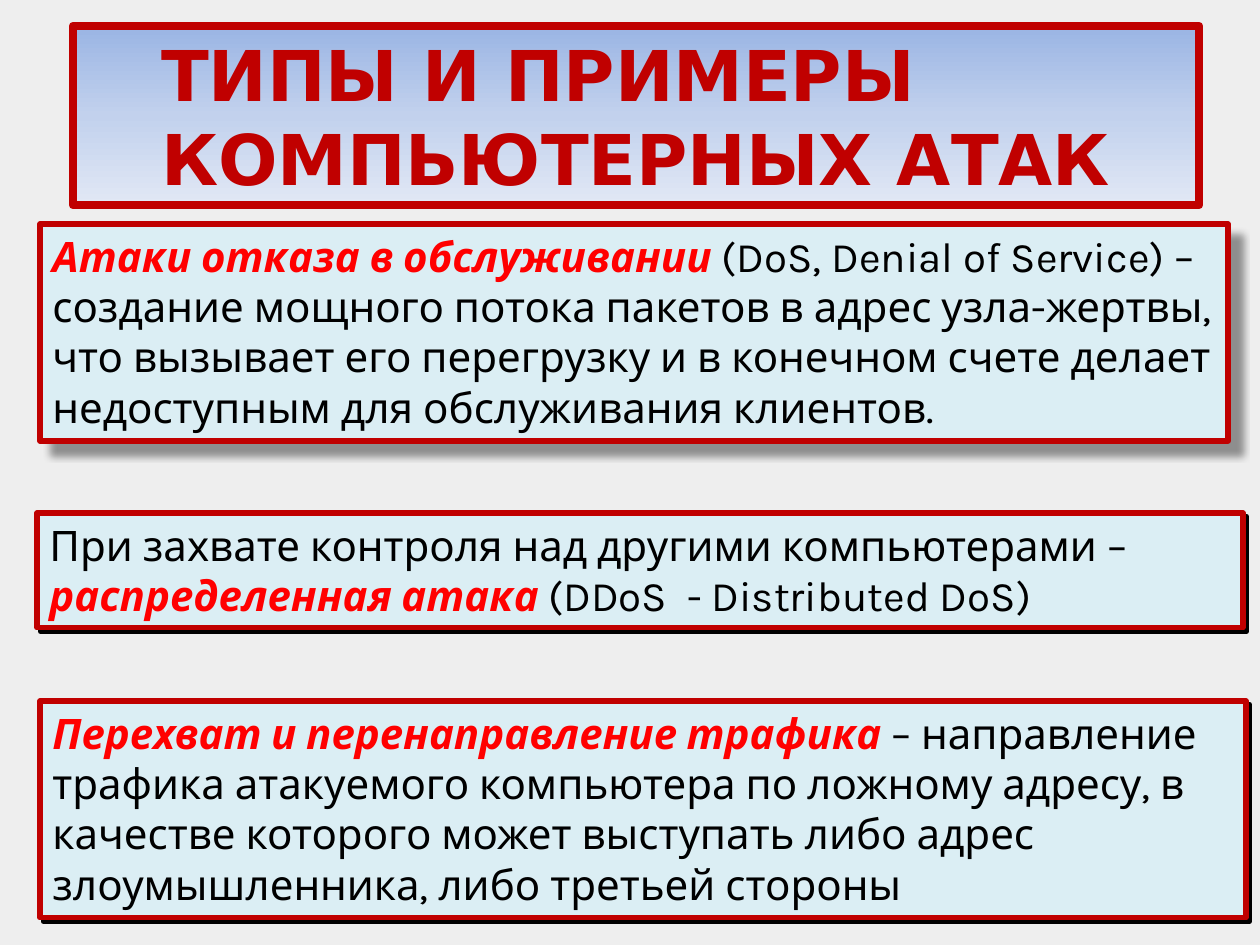
from copy import deepcopy
from dataclasses import dataclass

from lxml.etree import SubElement
from pptx import Presentation
from pptx.dml.color import RGBColor as Rgb
from pptx.enum.shapes import MSO_SHAPE as Shape
from pptx.enum.text import MSO_ANCHOR as Anchor, MSO_AUTO_SIZE as AutoSize, PP_ALIGN as Align
from pptx.oxml.ns import qn
from pptx.util import Emu, Pt

PX_PER_INCH = 126


@dataclass(frozen=True)
class Theme:
    background: str = "EEEEEE"
    panel: str = "DBEEF4"
    border: str = "C00000"
    title: str = "C00000"
    term: str = "FF0000"
    text: str = "000000"
    shadow: str = "000000"
    title_gradient: tuple = ((0, "9AB5E4"), (0.5, "C2D1ED"), (1, "E1E8F5"))
    title_font: str = "DejaVu Sans"
    body_font: str = "Karla"
    title_size: int = 40
    body_size: int = 24
    title_border: int = 5
    panel_border: int = 3


THEME = Theme()


@dataclass(frozen=True)
class Shadow:
    opacity: int
    blur: float
    distance: float


SOFT = Shadow(opacity=40, blur=4, distance=10)
HARD = Shadow(opacity=100, blur=0, distance=2.8)

# Position of each panel, its shadow, and its runs as (text, is a term)
PANELS = [
    ((40, 224, 1188, 217), SOFT, [
        ("Атаки отказа в обслуживании ", True),
        ("(DoS, Denial of Service) – создание мощного потока пакетов в адрес "
         "узла-жертвы, что вызывает его перегрузку и в конечном счете делает "
         "недоступным для обслуживания клиентов.", False),
    ]),
    ((37, 513, 1206, 115), HARD, [
        ("При захвате контроля над другими компьютерами – ", False),
        ("распределенная атака ", True),
        ("(DDoS  - Distributed DoS)", False),
    ]),
    ((40, 701, 1206, 217), HARD, [
        ("Перехват и перенаправление трафика ", True),
        ("– направление трафика атакуемого компьютера по ложному адресу, в "
         "качестве которого может выступать либо адрес злоумышленника, либо "
         "третьей стороны", False),
    ]),
]


def px(length):
    return Emu(round(length * 914400 / PX_PER_INCH))


def set_border(shape, width):
    shape.line.color.rgb = Rgb.from_string(THEME.border)
    shape.line.width = Pt(width)


def set_gradient(shape, stops):
    """Fill from top to bottom with any number of (position, colour) stops."""
    shape.fill.gradient()
    shape.fill.gradient_angle = 270
    stop_list = shape._element.spPr.find(".//" + qn("a:gsLst"))
    for _ in stops[2:]:
        stop_list.append(deepcopy(stop_list[0]))
    for stop, (position, color) in zip(shape.fill.gradient_stops, stops):
        stop.position = position
        stop.color.rgb = Rgb.from_string(color)


def set_shadow(shape, shadow):
    """Cast a shadow to the lower right, at 45 degrees."""
    shape.shadow.inherit = False
    effects = shape._element.spPr.find(qn("a:effectLst"))
    outer = SubElement(effects, qn("a:outerShdw"), blurRad=str(Pt(shadow.blur)),
                       dist=str(Pt(shadow.distance)), dir=str(45 * 60000),
                       algn="tl", rotWithShape="0")
    color = SubElement(outer, qn("a:srgbClr"), val=THEME.shadow)
    SubElement(color, qn("a:alpha"), val=str(shadow.opacity * 1000))


def add_run(paragraph, text, font, size, color, bold=False, italic=False):
    run = paragraph.add_run()
    run.text = text
    run.font.name = font
    run.font.size = Pt(size)
    run.font.color.rgb = Rgb.from_string(color)
    run.font.bold = bold
    run.font.italic = italic


def format_title(title, text):
    title.left, title.top, title.width, title.height = map(px, (73, 26, 1126, 179))
    set_gradient(title, THEME.title_gradient)
    set_border(title, THEME.title_border)
    frame = title.text_frame
    frame.word_wrap = True
    frame.auto_size = AutoSize.NONE
    frame.vertical_anchor = Anchor.MIDDLE
    frame.margin_left = px(88)
    paragraph = frame.paragraphs[0]
    paragraph.alignment = Align.LEFT
    add_run(paragraph, text, THEME.title_font, THEME.title_size, THEME.title, bold=True)


def add_panel(slide, box, shadow, runs):
    panel = slide.shapes.add_shape(Shape.RECTANGLE, *map(px, box))
    panel.fill.solid()
    panel.fill.fore_color.rgb = Rgb.from_string(THEME.panel)
    set_border(panel, THEME.panel_border)
    set_shadow(panel, shadow)
    frame = panel.text_frame
    frame.word_wrap = True
    frame.auto_size = AutoSize.SHAPE_TO_FIT_TEXT
    frame.vertical_anchor = Anchor.TOP
    paragraph = frame.paragraphs[0]
    paragraph.alignment = Align.LEFT
    for text, is_term in runs:
        add_run(paragraph, text, THEME.body_font, THEME.body_size,
                THEME.term if is_term else THEME.text, bold=is_term, italic=is_term)


def main():
    presentation = Presentation()
    presentation.slide_width, presentation.slide_height = px(1260), px(945)
    slide = presentation.slides.add_slide(presentation.slide_layouts[5])
    slide.background.fill.solid()
    slide.background.fill.fore_color.rgb = Rgb.from_string(THEME.background)
    format_title(slide.shapes.title, "ТИПЫ И ПРИМЕРЫ КОМПЬЮТЕРНЫХ АТАК")
    for box, shadow, runs in PANELS:
        add_panel(slide, box, shadow, runs)
    presentation.save("out.pptx")


if __name__ == "__main__":
    main()
